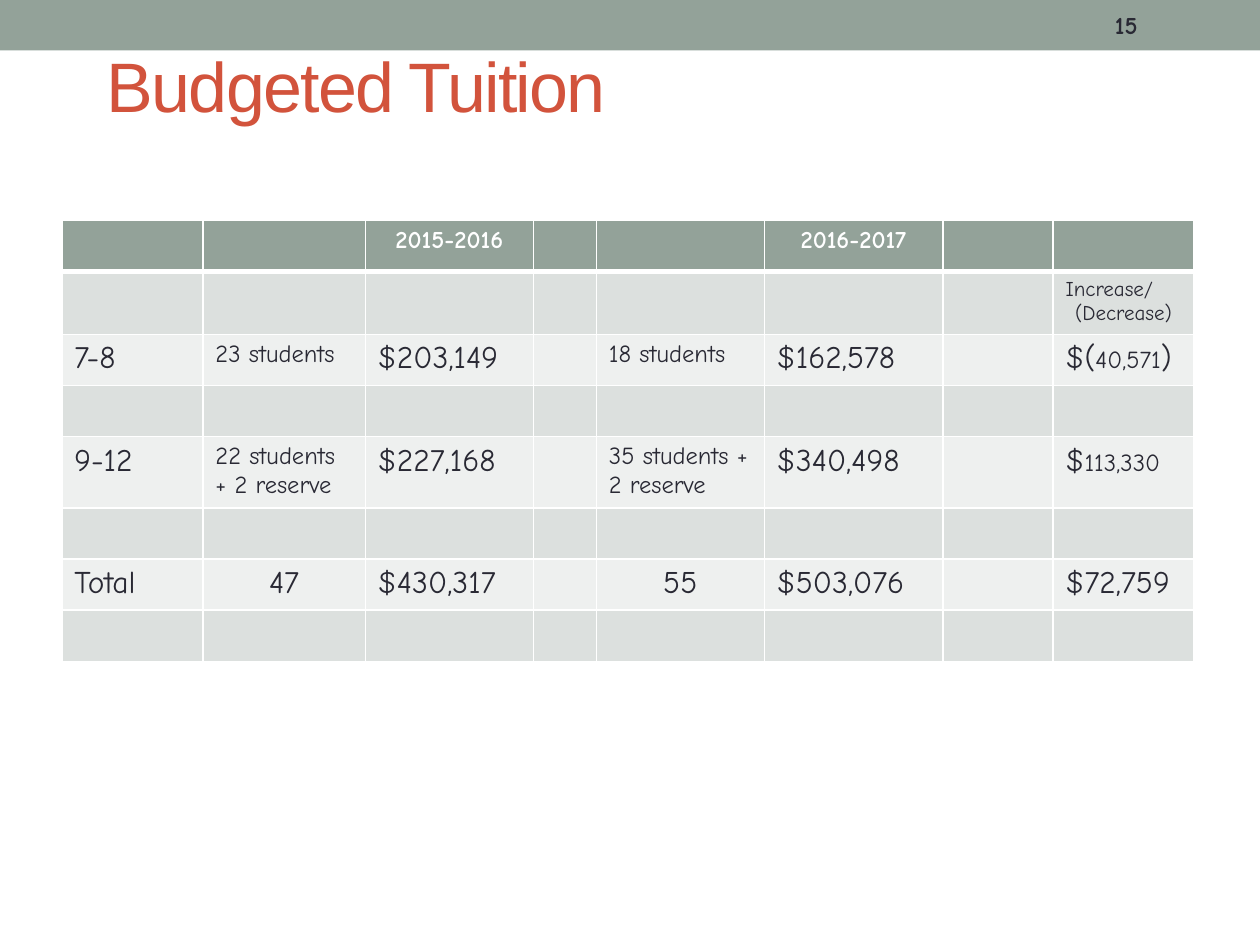
from dataclasses import dataclass

from lxml import etree
from pptx import Presentation
from pptx.dml.color import RGBColor
from pptx.enum.shapes import MSO_SHAPE
from pptx.enum.text import MSO_ANCHOR, PP_ALIGN
from pptx.oxml.ns import qn
from pptx.util import Pt

RECTANGLE = MSO_SHAPE.RECTANGLE
MIDDLE = MSO_ANCHOR.MIDDLE
LEFT, CENTER = PP_ALIGN.LEFT, PP_ALIGN.CENTER


@dataclass(frozen=True)
class Theme:
    sage: str = "93A299"
    band_dark: str = "DCE0DE"
    band_light: str = "EEF0EF"
    ink: str = "292934"
    accent: str = "D2533C"
    white: str = "FFFFFF"
    title_font: str = "Arial"
    body_font: str = "Comic Neue"
    title: int = 40
    large: int = 18
    medium: int = 14
    small: int = 12


theme = Theme()


def write(paragraph, text, *, size=theme.large, color=theme.ink, bold=False,
          font=theme.body_font, align=LEFT, spacing=0):
    """Add one formatted run to a paragraph."""
    paragraph.alignment = align
    run = paragraph.add_run()
    run.text = text
    run.font.name = font
    run.font.size = Pt(size)
    run.font.bold = bold
    run.font.color.rgb = RGBColor.from_string(color)
    if spacing:
        run.font._element.set("spc", str(spacing * 100))


def add_borders(cell, widths):
    """Draw white cell borders; widths are left, right, top, bottom."""
    properties = cell._tc.get_or_add_tcPr()
    for index, (side, width) in enumerate(zip("LRTB", widths)):
        line = etree.Element(qn(f"a:ln{side}"), w=str(Pt(width)))
        fill = etree.SubElement(line, qn("a:solidFill"))
        etree.SubElement(fill, qn("a:srgbClr"), val=theme.white)
        properties.insert(index, line)


presentation = Presentation()
presentation.slide_width = Pt(720)
presentation.slide_height = Pt(540)
slide = presentation.slides.add_slide(presentation.slide_layouts[6])

# Top band
band = slide.shapes.add_shape(RECTANGLE, 0, 0, Pt(720), Pt(28.8))
band.shadow.inherit = False
band.fill.solid()
band.fill.fore_color.rgb = RGBColor.from_string(theme.sage)
band.line.fill.background()

# Title and page number
labels = [
    ("Budgeted Tuition", (54, 12.24, 540.72, 72),
     dict(size=theme.title, color=theme.accent, font=theme.title_font, spacing=-1)),
    ("15", (630, 1.44, 54, 25.92), dict(size=theme.medium, bold=True)),
]
for text, box, style in labels:
    frame = slide.shapes.add_textbox(*map(Pt, box)).text_frame
    frame.word_wrap = True
    frame.vertical_anchor = MIDDLE
    write(frame.paragraphs[0], text, **style)

# Table content: each cell is a list of paragraphs, each paragraph a list of runs
header = dict(size=theme.medium, color=theme.white, bold=True, align=CENTER)
medium = dict(size=theme.medium)
small = dict(size=theme.small)
large = {}
centered = dict(align=CENTER)
contents = {
    (0, 2): [[("2015-2016", header)]],
    (0, 5): [[("2016-2017", header)]],
    (1, 7): [[("Increase/", small)], [("(Decrease)", small | centered)]],
    (2, 0): [[("7-8", large)]],
    (2, 1): [[("23 students", medium)]],
    (2, 2): [[("$203,149", large)]],
    (2, 4): [[("18 students", medium)]],
    (2, 5): [[("$162,578", large)]],
    (2, 7): [[("$(", large), ("40,571", medium), (")", large)]],
    (4, 0): [[("9-12", large)]],
    (4, 1): [[("22 students + 2 reserve", medium)]],
    (4, 2): [[("$227,168", large)]],
    (4, 4): [[("35 students + 2 reserve", medium)]],
    (4, 5): [[("$340,498", large)]],
    (4, 7): [[("$", large), ("113,330", medium)]],
    (6, 0): [[("Total", large)]],
    (6, 1): [[("47", centered)]],
    (6, 2): [[("$430,317", large)]],
    (6, 4): [[("55", centered)]],
    (6, 5): [[("$503,076", large)]],
    (6, 7): [[("$72,759", large)]],
}

# Table grid
column_widths = [80.64, 92.88, 96, 36, 96, 102, 63, 80.64]
row_heights = [29, 34.5, 29.2, 29.2, 39.4, 29.2, 29.2, 29.2]
table = slide.shapes.add_table(
    len(row_heights), len(column_widths), Pt(35.3), Pt(126),
    Pt(sum(column_widths)), Pt(sum(row_heights))).table
table.first_row = True
table.horz_banding = False
for column, width in zip(table.columns, column_widths):
    column.width = Pt(width)

# Table cells
for row_index, height in enumerate(row_heights):
    table.rows[row_index].height = Pt(height)
    if row_index == 0:
        color = theme.sage
    else:
        color = theme.band_dark if row_index % 2 else theme.band_light
    top = 3 if row_index == 1 else 1
    bottom = 3 if row_index == 0 else 1
    for column_index in range(len(column_widths)):
        cell = table.cell(row_index, column_index)
        cell.fill.solid()
        cell.fill.fore_color.rgb = RGBColor.from_string(color)
        add_borders(cell, (1, 1, top, bottom))
        frame = cell.text_frame
        frame.paragraphs[0].font.size = Pt(theme.medium)
        for index, runs in enumerate(contents.get((row_index, column_index), [])):
            paragraph = frame.add_paragraph() if index else frame.paragraphs[0]
            for text, style in runs:
                write(paragraph, text, **style)

presentation.save("out.pptx")
